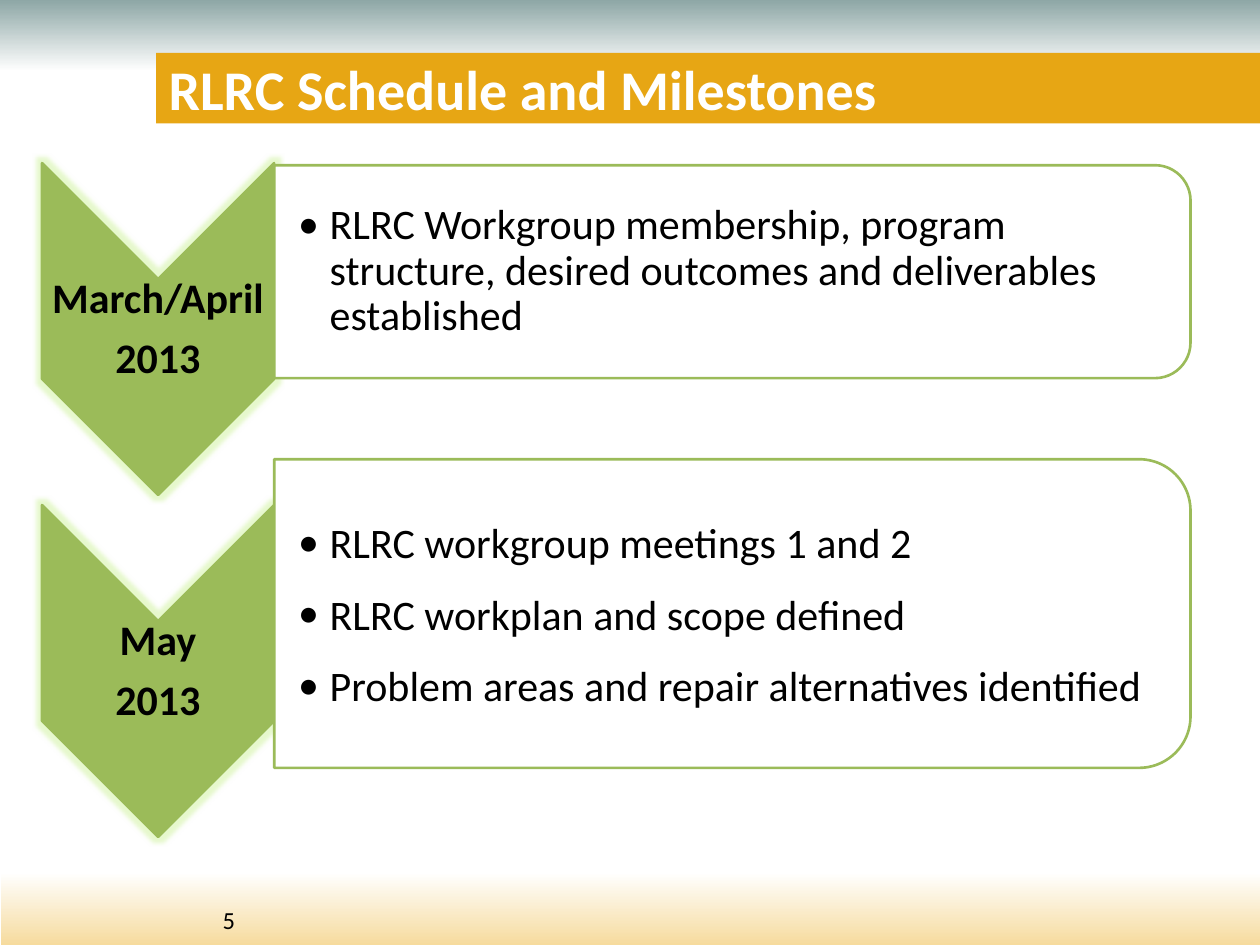
from lxml import etree
from pptx import Presentation
from pptx.dml.color import RGBColor
from pptx.enum.shapes import MSO_SHAPE
from pptx.enum.text import MSO_ANCHOR, PP_ALIGN
from pptx.oxml import parse_xml
from pptx.oxml.ns import nsdecls, qn
from pptx.util import Pt

GREEN = "9BBB59"


def color(value):
    return RGBColor.from_string(value)


def add_text(page, place, lines, font, paragraph=None, insets=(7.2, 3.6, 7.2, 3.6),
             anchor=MSO_ANCHOR.MIDDLE, bullet=False):
    box = page.shapes.add_textbox(*[Pt(value) for value in place])
    frame = box.text_frame
    frame.word_wrap = True
    frame.vertical_anchor = anchor
    for side, inset in zip(("left", "top", "right", "bottom"), insets):
        setattr(frame, f"margin_{side}", Pt(inset))
    for index, line in enumerate(lines):
        para = frame.paragraphs[0] if index == 0 else frame.add_paragraph()
        for name, value in (paragraph or {}).items():
            setattr(para, name, value)
        if bullet:
            properties = para._p.get_or_add_pPr()
            properties.set("marL", str(Pt(18)))
            properties.set("indent", str(-Pt(18)))
            etree.SubElement(properties, qn("a:buFont")).set("typeface", "Calibri")
            etree.SubElement(properties, qn("a:buChar")).set("char", "•")
        span = para.add_run()
        span.text = line
        span.font.name = "Calibri"
        for name, value in font.items():
            if name == "color":
                span.font.color.rgb = color(value)
            else:
                setattr(span.font, name, value)


deck = Presentation()
deck.slide_width, deck.slide_height = Pt(720), Pt(540)
page = deck.slides.add_slide(deck.slide_layouts[6])

# Fading bands along the top and bottom, and the title bar
bands = [
    ((-0.5, 0, 722, 78.5), "8EA7A6", 270),
    ((89.3, 30.2, 630.7, 40.3), "E7A614", None),
    ((0.7, 460, 719.3, 80), "F6DB9E", 90),
]
for place, shade, angle in bands:
    band = page.shapes.add_shape(MSO_SHAPE.RECTANGLE, *[Pt(value) for value in place])
    band.shadow.inherit = False
    band.line.fill.background()
    if angle is None:
        band.fill.solid()
        band.fill.fore_color.rgb = color(shade)
        continue
    band.fill.gradient()
    band.fill.gradient_angle = angle
    stops = zip(band.fill.gradient_stops, (0, 0.52), (shade, "FFFFFF"))
    for stop, position, tint in stops:
        stop.position = position
        stop.color.rgb = color(tint)

# Page number and title
add_text(page, (120.2, 513.4, 61.2, 24.5), ["5"], {"size": Pt(14), "color": "000000"},
         anchor=MSO_ANCHOR.TOP)
add_text(page, (89.3, 29.5, 630.7, 41.8), ["RLRC Schedule and Milestones"],
         {"size": Pt(32), "bold": True, "color": "FFFFFF"})

# Milestones: chevron top, date, card top, card height, card text, paragraph format
milestones = [
    (93.2, ["March/April", "2013"], 94.4, 121.7,
     ["RLRC Workgroup membership, program structure, desired outcomes "
      "and deliverables established"],
     {"line_spacing": 0.9, "space_after": Pt(3.6)}),
    (288.6, ["May", "2013"], 262.4, 176.4,
     ["RLRC workgroup meetings 1 and 2", "RLRC workplan and scope defined",
      "Problem areas and repair alternatives identified"],
     {"space_after": Pt(12)}),
]
chevron_left, chevron_width, chevron_height = 24, 132.6, 189.6
card_left, card_width = 156.7, 523.6
date_format = {"alignment": PP_ALIGN.CENTER, "line_spacing": 0.9, "space_after": Pt(8.4)}

for chevron_top, date, card_top, card_height, items, item_format in milestones:
    # Both outlines are turned a quarter, so width and height trade places
    outlines = [
        (MSO_SHAPE.CHEVRON, chevron_left, chevron_top, chevron_width, chevron_height, GREEN),
        (MSO_SHAPE.ROUND_2_SAME_RECTANGLE, card_left, card_top, card_width, card_height,
         "FFFFFF"),
    ]
    for kind, left, top, width, height, shade in outlines:
        shift = (width - height) / 2
        outline = page.shapes.add_shape(kind, Pt(left + shift), Pt(top - shift),
                                        Pt(height), Pt(width))
        outline.rotation = 90
        outline.shadow.inherit = False
        outline.fill.solid()
        outline.fill.fore_color.rgb = color(shade)
        outline.line.color.rgb = color(GREEN)
        outline.line.width = Pt(1.5)
        if kind == MSO_SHAPE.CHEVRON:
            outline._element.spPr.find(qn("a:effectLst")).append(parse_xml(
                f'<a:glow {nsdecls("a")} rad="{Pt(5)}"><a:srgbClr val="C8F090">'
                '<a:alpha val="45000"/></a:srgbClr></a:glow>'))

    add_text(page, (chevron_left, chevron_top + 66.6, chevron_width, 57), date,
             {"size": Pt(24), "bold": True, "color": "000000"}, date_format,
             (1.2, 1.2, 1.2, 1.2))
    add_text(page, (card_left, card_top + 6, card_width - 7, card_height - 12), items,
             {"size": Pt(24), "color": "000000"}, item_format,
             (13.7, 1.2, 1.2, 1.2), bullet=True)

deck.save("out.pptx")
